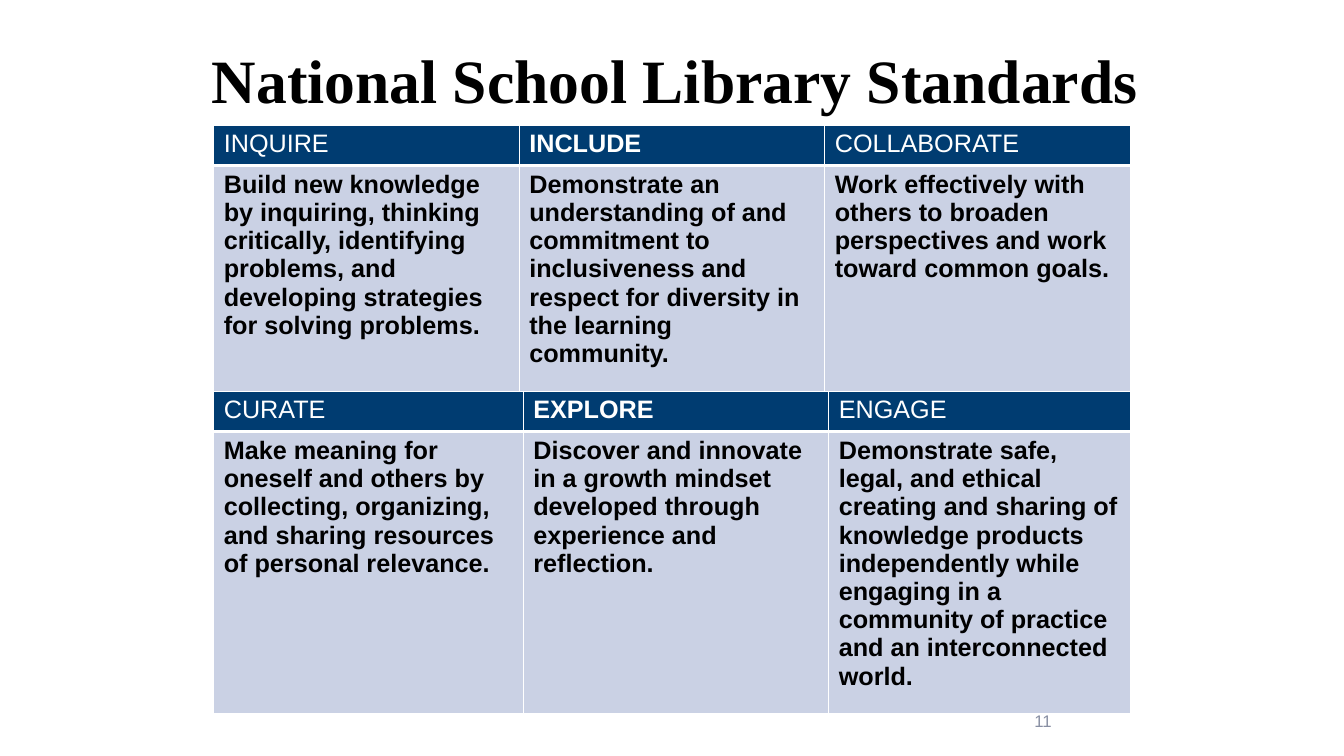
from lxml import etree
from pptx import Presentation
from pptx.dml.color import RGBColor
from pptx.enum.text import MSO_ANCHOR, PP_ALIGN
from pptx.oxml.ns import qn
from pptx.util import Inches, Pt

LEFT, RIGHT, MIDDLE = PP_ALIGN.LEFT, PP_ALIGN.RIGHT, MSO_ANCHOR.MIDDLE
NAVY, PALE, WHITE, BLACK, GRAY = "003C71", "CAD1E4", "FFFFFF", "000000", "888FA3"

# Each table: top, column widths, row heights, headings, descriptions
TABLES = [
    (1.24, (3.03, 3.03, 3.03), (0.37, 2.26),
     ("INQUIRE", "INCLUDE", "COLLABORATE"),
     ("Build new knowledge by inquiring, thinking critically, identifying problems, "
      "and developing strategies for solving problems.",
      "Demonstrate an understanding of and commitment to inclusiveness and respect "
      "for diversity in the learning community.",
      "Work effectively with others to broaden perspectives and work toward common goals.")),
    (3.88, (3.07, 3.03, 2.99), (0.39, 2.62),
     ("CURATE", "EXPLORE", "ENGAGE"),
     ("Make meaning for oneself and others by collecting, organizing, and sharing "
      "resources of personal relevance.",
      "Discover and innovate in a growth mindset developed through experience and reflection.",
      "Demonstrate safe, legal, and ethical creating and sharing of knowledge products "
      "independently while engaging in a community of practice and an interconnected world.")),
]


def add_run(p, text, size, color, bold=False, font="Arial"):
    r = p.add_run()
    r.text = text
    r.font.name, r.font.size, r.font.bold = font, Pt(size), bold
    r.font.color.rgb = RGBColor.from_string(color)


def add_borders(cell, bottom, top):
    tcPr = cell._tc.get_or_add_tcPr()
    for side, width in (("L", 1), ("R", 1), ("T", top), ("B", bottom)):
        ln = etree.SubElement(tcPr, qn("a:ln" + side), w=str(Pt(width)))
        fill = etree.SubElement(ln, qn("a:solidFill"))
        etree.SubElement(fill, qn("a:srgbClr"), val=WHITE)


prs = Presentation()
prs.slide_width, prs.slide_height = Inches(13.33), Inches(7.5)
s = prs.slides.add_slide(prs.slide_layouts[5])

# Title
title = s.shapes.title
title.left, title.top = Inches(2), Inches(0.1)
title.width, title.height = Inches(11.33), Inches(1.45)
tf = title.text_frame
tf.vertical_anchor = MIDDLE
p = tf.paragraphs[0]
p.alignment, p.line_spacing = LEFT, 0.9
add_run(p, "National School Library Standards", 44, BLACK, True, "Times New Roman")

# Slide number
tf = s.shapes.add_textbox(Inches(9.42), Inches(6.95), Inches(1.11), Inches(0.4)).text_frame
tf.word_wrap, tf.vertical_anchor = True, MIDDLE
p = tf.paragraphs[0]
p.alignment = RIGHT
add_run(p, "11", 12, GRAY)

# Two stacked tables of standards
for top, widths, heights, headings, descriptions in TABLES:
    table = s.shapes.add_table(2, 3, Inches(2.12), Inches(top),
                               Inches(sum(widths)), Inches(sum(heights))).table
    for column, width in zip(table.columns, widths):
        column.width = Inches(width)
    for row, height in zip(table.rows, heights):
        row.height = Inches(height)
    for i, texts in enumerate((headings, descriptions)):
        header = i == 0
        for j, text in enumerate(texts):
            cell = table.cell(i, j)
            add_borders(cell, bottom=3 if header else 1, top=1 if header else 3)
            cell.fill.solid()
            cell.fill.fore_color.rgb = RGBColor.from_string(NAVY if header else PALE)
            # Only the middle heading is bold
            add_run(cell.text_frame.paragraphs[0], text, 18,
                    WHITE if header else BLACK, bold=not header or j == 1)

prs.save("out.pptx")
